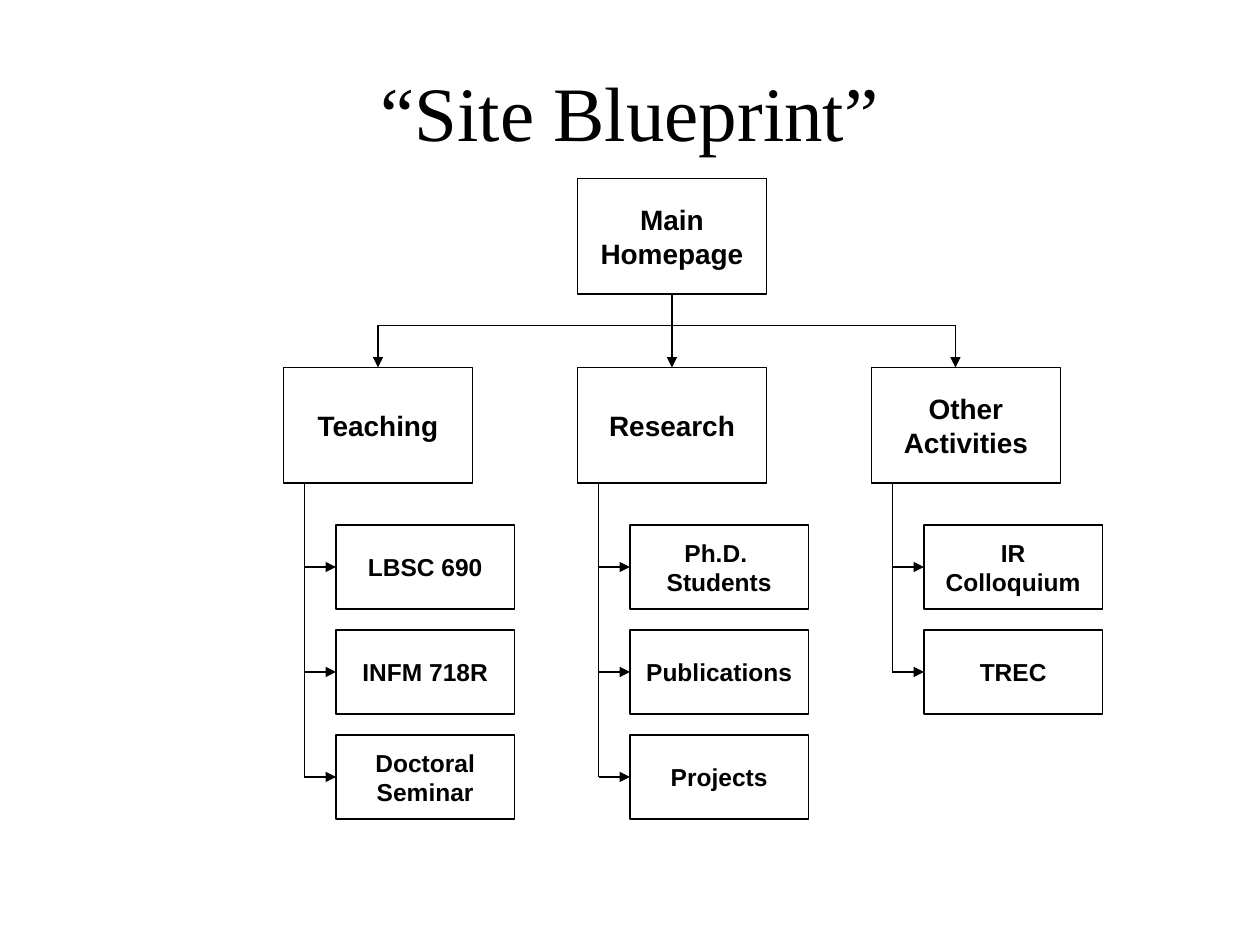
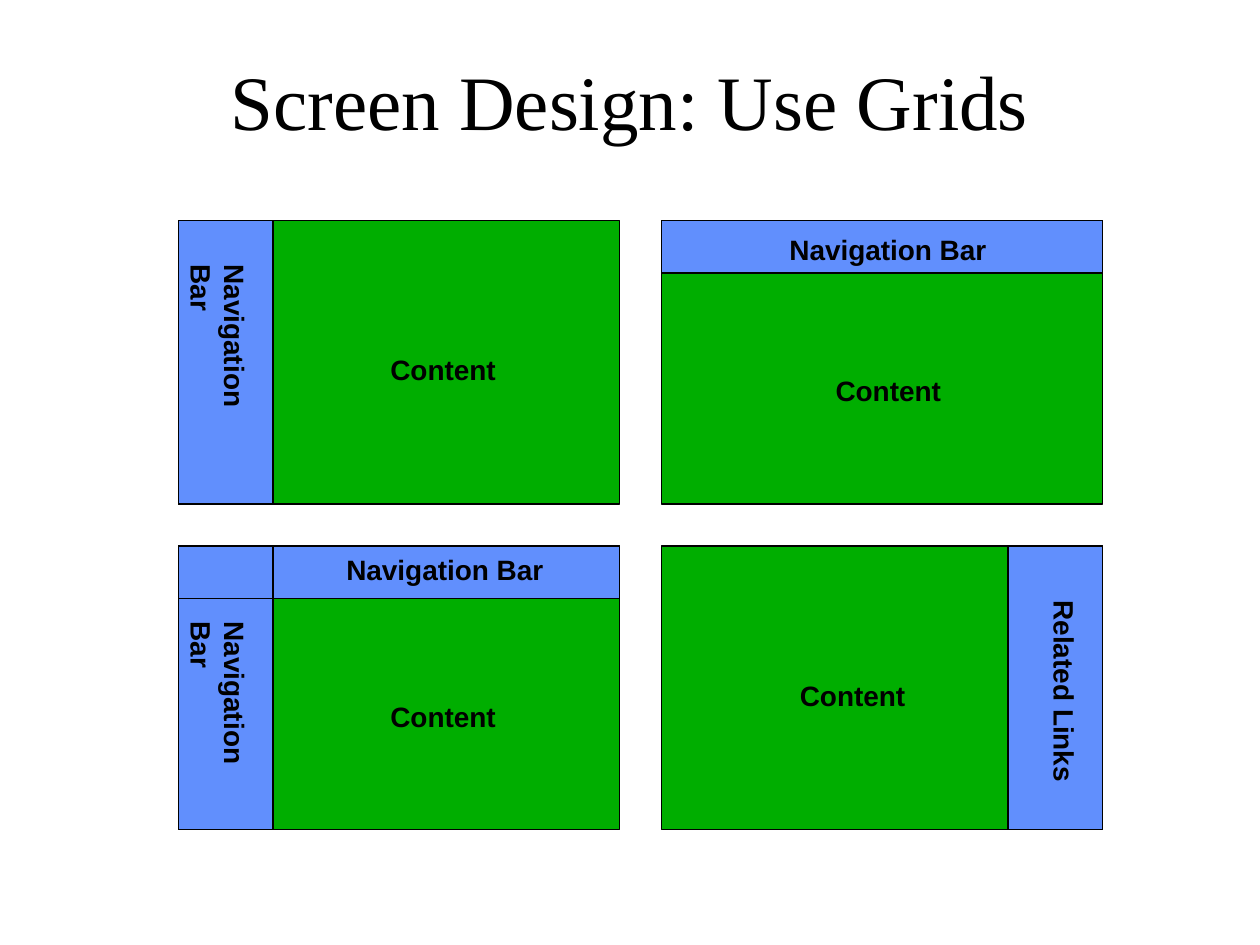
"""Build two slides on web site structure and screen layout grids."""
from lxml.etree import SubElement
from pptx import Presentation
from pptx.dml.color import RGBColor as Color
from pptx.enum.shapes import MSO_CONNECTOR as Connector, MSO_SHAPE as Shape
from pptx.enum.text import MSO_ANCHOR as Anchor, MSO_AUTO_SIZE as AutoSize, PP_ALIGN as Align
from pptx.oxml.ns import qn
from pptx.util import Inches, Pt

COLORS = {"ink": "000000", "content": "00AE00", "navigation": "618FFD"}
COLUMNS, ROWS = 120, 90


class Deck:
    def __init__(self):
        self.presentation = Presentation()
        self.presentation.slide_width = Inches(10)
        self.presentation.slide_height = Inches(7.5)
        self.column = self.presentation.slide_width / COLUMNS
        self.row = self.presentation.slide_height / ROWS
        self.slide = None

    def place(self, left, top, width, height):
        return (round(left * self.column), round(top * self.row),
                round(width * self.column), round(height * self.row))

    def style_text(self, frame, text, size, font="Arial", bold=True, align=Align.CENTER):
        frame.text = text
        for paragraph in frame.paragraphs:
            paragraph.alignment = align
            for run in paragraph.runs:
                run.font.name, run.font.size, run.font.bold = font, Pt(size), bold
                run.font.color.rgb = Color.from_string(COLORS["ink"])

    def outline(self, line):
        line.color.rgb = Color.from_string(COLORS["ink"])
        line.width = Pt(0.75)

    def add_slide(self, title, top):
        self.slide = self.presentation.slides.add_slide(self.presentation.slide_layouts[6])
        frame = self.slide.shapes.add_textbox(*self.place(9, top, 102, 15)).text_frame
        frame.word_wrap = True
        frame.vertical_anchor = Anchor.MIDDLE
        self.style_text(frame, title, 44, "Times New Roman", False)

    def box(self, left, top, width, height, text="", size=16, fill=None):
        shape = self.slide.shapes.add_shape(
            Shape.RECTANGLE, *self.place(left, top, width, height))
        shape.shadow.inherit = False
        self.outline(shape.line)
        if fill:
            shape.fill.solid()
            shape.fill.fore_color.rgb = Color.from_string(COLORS[fill])
        else:
            shape.fill.background()
        if text:
            shape.text_frame.word_wrap = False
            shape.text_frame.vertical_anchor = Anchor.MIDDLE
            self.style_text(shape.text_frame, text, size)

    def label(self, left, top, width, text, height=4.4, vertical=False):
        shape = self.slide.shapes.add_textbox(*self.place(left, top, width, height))
        frame = shape.text_frame
        frame.word_wrap = vertical
        frame.auto_size = AutoSize.SHAPE_TO_FIT_TEXT
        if vertical:
            frame._txBody.bodyPr.set("vert", "eaVert")
        self.style_text(frame, text, 16, align=Align.LEFT)

    def side_label(self, left, top, text):
        self.label(left, top, 5.6, text, height=21, vertical=True)

    def line(self, start, end, arrow=False):
        connector = self.slide.shapes.add_connector(
            Connector.STRAIGHT, *self.place(*start, *end))
        self.outline(connector.line)
        properties = connector._element.spPr
        if arrow:
            SubElement(properties.find(qn("a:ln")), qn("a:tailEnd"), type="triangle")
        SubElement(properties, qn("a:effectLst"))


def build_blueprint(deck):
    deck.add_slide("“Site Blueprint”", 3)
    sections = [
        ("Teaching", 36, ["LBSC 690", "INFM 718R", "Doctoral\vSeminar"]),
        ("Research", 64, ["Ph.D. \nStudents", "Publications", "Projects"]),
        ("Other\vActivities", 91, ["IR\nColloquium", "TREC"]),
    ]
    deck.box(55, 17, 18, 11, "Main\nHomepage")
    deck.line((36, 31), (91, 31))
    for index, (section, arrow_column, pages) in enumerate(sections):
        left = 27 + 28 * index
        trunk = left + 2
        deck.box(left, 35, 18, 11, section)
        deck.line((arrow_column, 28 if index == 1 else 31), (arrow_column, 35), arrow=True)
        for number, page in enumerate(pages):
            top = 50 + 10 * number
            deck.box(left + 5, top, 17, 8, page, 14)
            deck.line((trunk, top + 4), (left + 5, top + 4), arrow=True)
        deck.line((trunk, 46), (trunk, top + 4))


def build_grids(deck):
    deck.add_slide("Screen Design: Use Grids", 2)
    width, height, side, bar = 42, 27, 9, 5
    left, right, upper, lower = 17, 63, 21, 52
    screens = [
        (left, upper, (19, 12), [(0, 0, side, height)]),
        (right, upper, (15.4, 14), [(0, 0, width, bar)]),
        (left, lower, (19, 14),
         [(0, 0, side, height), (0, 0, width, bar), (0, 0, side, bar)]),
        (right, lower, (12, 12), [(width - side, 0, side, height)]),
    ]
    for x, y, (label_x, label_y), bands in screens:
        deck.box(x, y, width, height, fill="content")
        for band_x, band_y, band_width, band_height in bands:
            deck.box(x + band_x, y + band_y, band_width, band_height, fill="navigation")
        deck.label(x + label_x, y + label_y, 12.5, "Content")
    deck.label(right + 11, upper + 0.6, 21.2, "Navigation Bar")
    deck.label(left + 14.8, lower, 21.2, "Navigation Bar")
    deck.side_label(left + 2, upper + 3, "Navigation Bar")
    deck.side_label(left + 2, lower + 6, "Navigation Bar")
    deck.side_label(right + 35, lower + 4, "Related Links")


def main():
    deck = Deck()
    build_blueprint(deck)
    build_grids(deck)
    deck.presentation.save("out.pptx")


if __name__ == "__main__":
    main()
